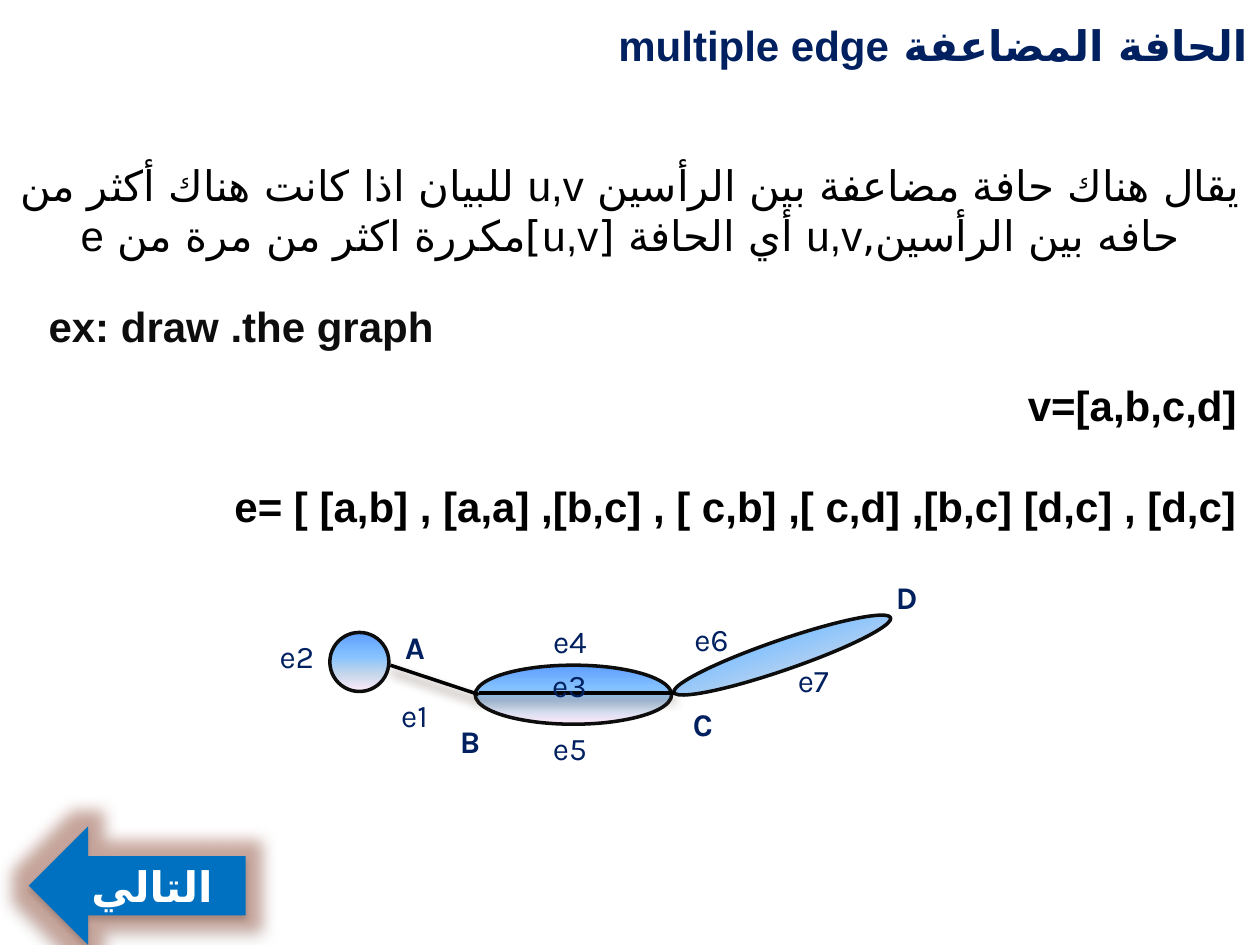
from lxml.etree import SubElement
from pptx import Presentation
from pptx.dml.color import RGBColor
from pptx.enum.shapes import MSO_CONNECTOR, MSO_SHAPE
from pptx.enum.text import MSO_ANCHOR, MSO_AUTO_SIZE, PP_ALIGN
from pptx.oxml.ns import qn
from pptx.util import Cm, Pt

NAVY = RGBColor(0x00, 0x20, 0x60)
BLACK = RGBColor(0x00, 0x00, 0x00)
INK = RGBColor(0x0D, 0x0D, 0x0D)
WHITE = RGBColor(0xFF, 0xFF, 0xFF)
BLUE = RGBColor(0x00, 0x70, 0xC0)
BROWN = RGBColor(0x4E, 0x3B, 0x30)
GLOW = RGBColor(0xA0, 0x50, 0x38)
GRADIENT = [
    (0, RGBColor(0x5E, 0x9E, 0xFF)),
    (40, RGBColor(0x85, 0xC2, 0xFF)),
    (70, RGBColor(0xC4, 0xD6, 0xEB)),
    (100, RGBColor(0xFF, 0xEB, 0xFA)),
]
ARABIC_FONT = "DejaVu Sans"

LOOPS = [
    (6.65, 12.75, 1.19, 1.19, 0),
    (9.58, 13.41, 3.96, 1.19, 0),
    (13.46, 12.9, 4.62, 0.61, 341),
]
EDGES = [(7.87, 13.41, 9.65, 14), (9.65, 13.97, 13.61, 13.97)]
VERTEX_LABELS = [
    ("D", 17.53, 11.63, 1.5, 0.81),
    ("A", 7.82, 12.6, 1.09, 0.89),
    ("C", 13.61, 14.15, 1.12, 0.89),
    ("B", 8.79, 14.35, 1.37, 1.17),
]
EDGE_LABELS = [
    ("e1", 7.49, 13.89, 1.73, 1.04),
    ("e2", 4.88, 12.9, 2.21, 0.64),
    ("e3", 10.59, 13.46, 1.78, 0.69),
    ("e4", 10.46, 12.57, 2.06, 0.69),
    ("e5", 10.46, 14.71, 2.06, 0.74),
    ("e6", 13.39, 12.52, 1.91, 0.74),
    ("e7", 15.67, 13.41, 1.45, 0.61),
]


def add_color(parent, color, alpha=100):
    clr = SubElement(parent, qn("a:srgbClr"), val=str(color))
    if alpha < 100:
        SubElement(clr, qn("a:alpha"), val=str(alpha * 1000))


def add_effects(sp, color, alpha, blur, dist, glow=None):
    sp_pr = sp._element.spPr
    for old in sp_pr.findall(qn("a:effectLst")):
        sp_pr.remove(old)
    effects = SubElement(sp_pr, qn("a:effectLst"))
    if glow:
        add_color(SubElement(effects, qn("a:glow"), rad=str(Pt(glow))), GLOW, 40)
    shadow = SubElement(effects, qn("a:outerShdw"), blurRad=str(Pt(blur)),
                        dist=str(Pt(dist)), dir="5400000", rotWithShape="0")
    add_color(shadow, color, alpha)


def write(p, text, size, font, color, bold=False, align=PP_ALIGN.CENTER):
    p.alignment = align
    p._p.get_or_add_pPr().set("rtl", "1")
    r = p.add_run()
    r.text = text
    r.font.size = Pt(size)
    r.font.bold = bold
    r.font.name = font
    r.font.color.rgb = color
    SubElement(r._r.get_or_add_rPr(), qn("a:cs"), typeface=ARABIC_FONT)


def add_text(s, box, lines, size, font, color, bold=False,
             align=PP_ALIGN.CENTER, margins=(0.25, 0.13, 0.25, 0.13), gap=0):
    tf = s.shapes.add_textbox(*map(Cm, box)).text_frame
    tf.word_wrap = True
    tf.vertical_anchor = MSO_ANCHOR.MIDDLE
    tf.margin_left, tf.margin_top, tf.margin_right, tf.margin_bottom = map(Cm, margins)
    for i, line in enumerate(lines):
        p = tf.add_paragraph() if i else tf.paragraphs[0]
        if i:
            p.space_before = Pt(gap)
        write(p, line, size, font, color, bold, align)


def add_title(s, text):
    sp = s.shapes.title
    sp.left, sp.top, sp.width, sp.height = Cm(0), Cm(0), Cm(25.4), Cm(1.8)
    tf = sp.text_frame
    tf.auto_size = MSO_AUTO_SIZE.NONE
    tf.vertical_anchor = MSO_ANCHOR.MIDDLE
    write(tf.paragraphs[0], text, 24, "Arial", NAVY, True, PP_ALIGN.RIGHT)


def add_loop(s, x, y, w, h, rotation):
    sp = s.shapes.add_shape(MSO_SHAPE.OVAL, Cm(x), Cm(y), Cm(w), Cm(h))
    sp.rotation = rotation
    sp.shadow.inherit = False
    sp.line.color.rgb = INK
    sp.line.width = Pt(2)
    sp.fill.gradient()
    sp.fill.gradient_angle = 270
    stops = sp._element.spPr.find(qn("a:gradFill")).find(qn("a:gsLst"))
    for old in list(stops):
        stops.remove(old)
    for pos, color in GRADIENT:
        add_color(SubElement(stops, qn("a:gs"), pos=str(pos * 1000)), color)


def add_edge(s, *ends):
    line = s.shapes.add_connector(MSO_CONNECTOR.STRAIGHT, *map(Cm, ends))
    line.line.color.rgb = BLACK
    line.line.width = Pt(2)
    add_effects(line, BROWN, 60, 6, 4)


def add_next_arrow(s):
    sp = s.shapes.add_shape(MSO_SHAPE.LEFT_ARROW, Cm(0.58), Cm(16.66), Cm(4.37), Cm(2.39))
    sp.fill.solid()
    sp.fill.fore_color.rgb = BLUE
    sp.line.fill.background()
    add_effects(sp, BLACK, 32, 3.5, 2.2, glow=18)
    tf = sp.text_frame
    tf.vertical_anchor = MSO_ANCHOR.MIDDLE
    write(tf.paragraphs[0], "التالي", 24, "Noto Sans Mono", WHITE, True)


def main():
    prs = Presentation()
    prs.slide_width, prs.slide_height = Cm(25.4), Cm(19.05)
    s = prs.slides.add_slide(prs.slide_layouts[5])
    for loop in LOOPS:
        add_loop(s, *loop)
    for edge in EDGES:
        add_edge(s, *edge)
    add_title(s, "الحافة المضاعفة multiple edge")
    add_text(s, (0, 3.51, 25.4, 3.3),
             ["يقال هناك حافة مضاعفة بين الرأسين u,v للبيان اذا كانت هناك أكثر من حافه "
              "بين الرأسين,u,v أي الحافة [u,v]مكررة اكثر من مرة من e"],
             24, "Arial", BLACK, margins=(0.25, 0.13, 0.25, 2))
    add_text(s, (0.48, 5.99, 25.4, 1.17), ["ex: draw .the graph"], 24, "Arial", INK,
             True, PP_ALIGN.LEFT, margins=(0.5, 0.13, 0.25, 0.13))
    add_text(s, (0, 7.37, 25.4, 4.6),
             ["v=[a,b,c,d]", "e= [ [a,b] , [a,a] ,[b,c] , [ c,b] ,[ c,d] ,[b,c] [d,c] , [d,c]"],
             24, "Arial", BLACK, True, PP_ALIGN.RIGHT, margins=(0.25, 0.13, 0.47, 1.12), gap=29)
    for labels, bold in ((VERTEX_LABELS, True), (EDGE_LABELS, False)):
        for text, *box in labels:
            add_text(s, box, [text], 18, "Karla", NAVY, bold, margins=(0, 0, 0, 0))
    add_next_arrow(s)
    prs.save("out.pptx")


if __name__ == "__main__":
    main()
